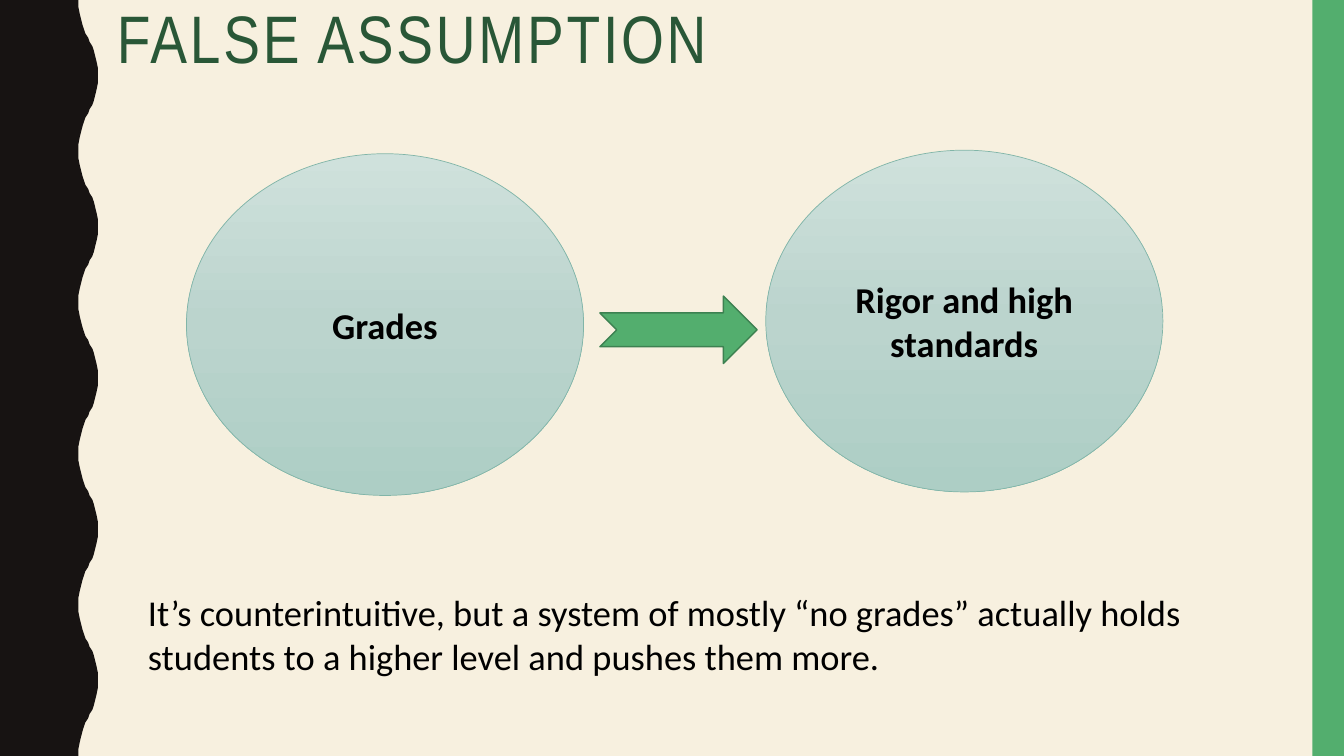
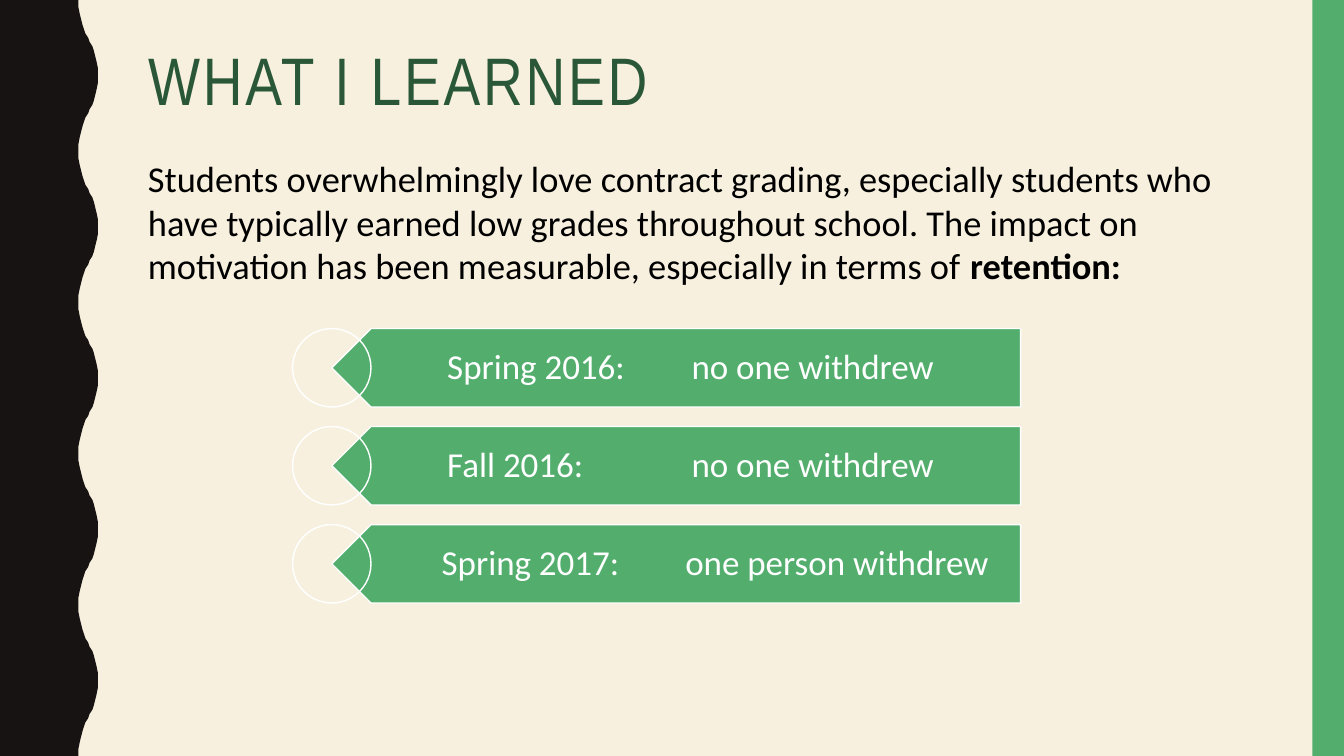
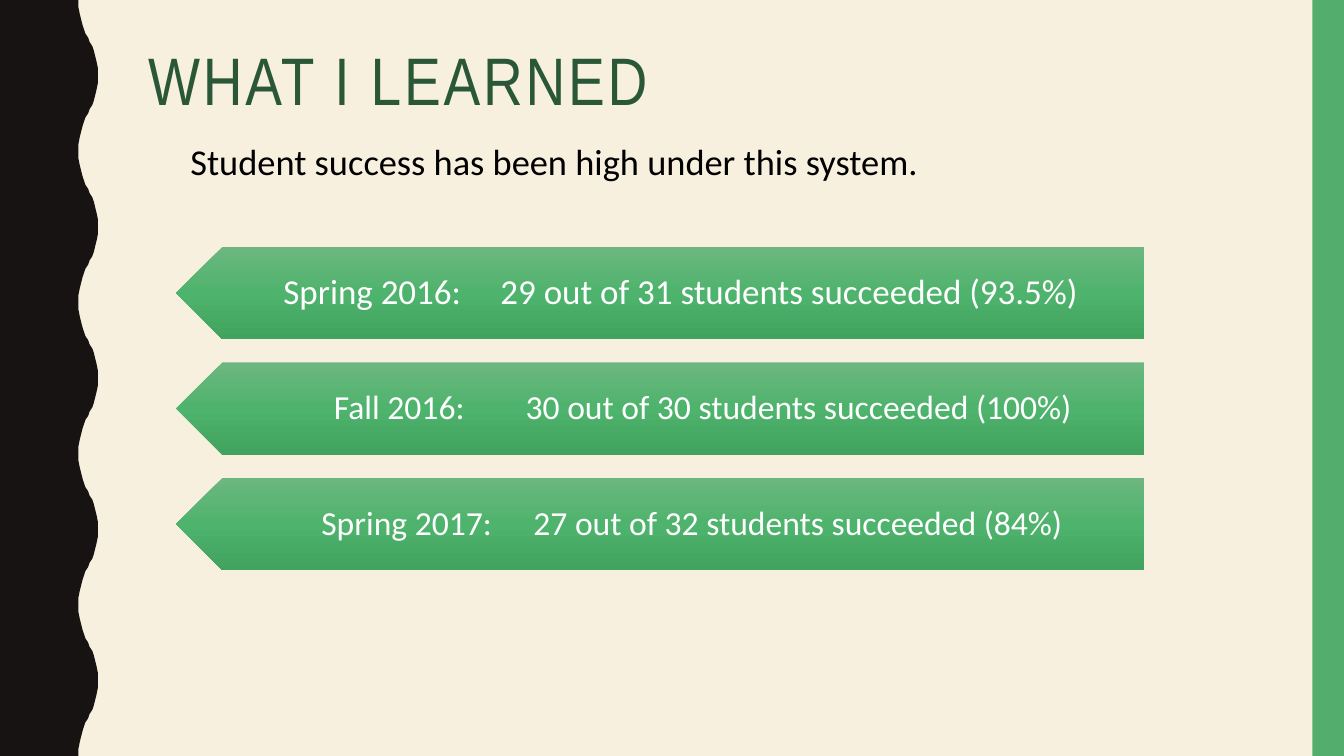
from copy import deepcopy

from pptx import Presentation
from pptx.dml.color import RGBColor
from pptx.enum.shapes import MSO_SHAPE
from pptx.enum.text import MSO_ANCHOR, MSO_AUTO_SIZE, PP_ALIGN
from pptx.oxml.ns import qn
from pptx.util import Pt

WIDE, HIGH = 960, 540
CREAM, INK, GREEN, PINE = "F7F0DF", "171312", "53AE6E", "295737"
EDGE, TEAL, WHITE, BLACK = "3D8151", "81B5A8", "FFFFFF", "000000"
MIST = ("CFE1DC", "BBD4CD", "ADCEC5")
LEAF = ("6CB780", "4EB36C", "42A35E")
HEAD, BODY = "Arial Narrow", "Calibri"
WAVE = [(56, 0), (56.3, 5), (57, 10), (57.8, 14.2), (58.6, 18), (59.7, 21),
        (61.2, 24), (62.6, 27), (64.1, 30), (65.5, 33), (67, 36),
        (68.2, 39.8), (69.2, 44), (69.8, 49), (70, 54)]


def tint(code):
    """Turn a hex string into a colour."""
    return RGBColor.from_string(code)


def paint(shape, fill=None, line=None, width=1):
    """Set fill (none, one colour or three stops) and line of a shape."""
    shape.shadow.inherit = False
    if fill is None:
        shape.fill.background()
    elif isinstance(fill, str):
        shape.fill.solid()
        shape.fill.fore_color.rgb = tint(fill)
    else:
        shape.fill.gradient()
        shape.fill.gradient_angle = 270
        stops = shape._element.spPr.find(qn("a:gradFill")).find(qn("a:gsLst"))
        stops.insert(1, deepcopy(stops[0]))
        for stop, code, place in zip(shape.fill.gradient_stops, fill, (0, 0.5, 1)):
            stop.color.rgb = tint(code)
            stop.position = place
    if line:
        shape.line.color.rgb = tint(line)
        shape.line.width = Pt(width)
    else:
        shape.line.fill.background()


def draw(slide, kind, box, **look):
    """Add a painted preset shape in a box."""
    shape = slide.shapes.add_shape(kind, *map(Pt, box))
    paint(shape, **look)
    return shape


def write(shape, text, size=26, font=BODY, color=BLACK, bold=False, strong="",
          align=PP_ALIGN.LEFT, anchor=MSO_ANCHOR.TOP, lead=None, space=0,
          inset=None, tab=None, wrap=True):
    """Put one formatted paragraph, with an optional bold ending, in a shape."""
    frame = shape.text_frame
    frame.auto_size = MSO_AUTO_SIZE.NONE
    frame.word_wrap = wrap
    frame.vertical_anchor = anchor
    if inset is not None:
        frame.margin_left = frame.margin_right = Pt(inset)
    para = frame.paragraphs[0]
    para.alignment = align
    if lead:
        para.line_spacing = lead
    if tab:
        stops = para._p.get_or_add_pPr().makeelement(qn("a:tabLst"), {})
        stops.append(stops.makeelement(
            qn("a:tab"), {"pos": str(int(Pt(tab))), "algn": "l"}))
        para._p.get_or_add_pPr().append(stops)
    for part, heavy in ((text, bold), (strong, True)):
        if part:
            run = para.add_run()
            run.text = part
            run.font.name = font
            run.font.size = Pt(size)
            run.font.bold = heavy
            run.font.color.rgb = tint(color)
            if space:
                run._r.get_or_add_rPr().set("spc", str(space * 100))


def note(slide, box, text, **form):
    """Add a text box."""
    write(slide.shapes.add_textbox(*map(Pt, box)), text, **form)


def frame(deck, layout):
    """Give the layout its ground, wavy left band and right band."""
    layout.background.fill.solid()
    layout.background.fill.fore_color.rgb = tint(CREAM)
    slide = deck.slides[0]
    half = WAVE[-1][1]
    turn = WAVE + [(x, 2 * half - y) for x, y in reversed(WAVE[:-1])]
    edge = [(x, y + top) for top in range(0, HIGH, 2 * half) for x, y in turn]
    form = slide.shapes.build_freeform(0, 0, scale=Pt(1))
    form.add_line_segments(edge + [(0, HIGH)], close=True)
    wave = form.convert_to_shape()
    paint(wave, INK)
    band = draw(slide, MSO_SHAPE.RECTANGLE, (937.5, 0, 22.5, HIGH), fill=GREEN)
    for spot, shape in enumerate((wave, band), 2):
        layout.shapes._spTree.insert(spot, shape._element)


def start(deck, layout, text, left=98.6, top=30.2):
    """Add a slide with its title."""
    slide = deck.slides.add_slide(layout)
    title = slide.shapes.title
    title.left, title.top, title.width, title.height = map(Pt, (left, top, 801.4, 117.4))
    write(title, text, size=48, font=HEAD, color=PINE, lead=0.9, space=2)
    return slide


def disc(slide, box, text):
    """Draw a soft ellipse with a bold label."""
    shape = draw(slide, MSO_SHAPE.OVAL, box, fill=MIST, line=TEAL, width=0.5)
    write(shape, text, bold=True, align=PP_ALIGN.CENTER, anchor=MSO_ANCHOR.MIDDLE)


def bars(slide, box, step, rows, ring=False, **look):
    """Stack left-pointing bars; each row has term, result, their offsets and size."""
    left, top, width, high = box
    for rank, (term, result, first, second, size) in enumerate(rows):
        y = top + rank * step
        bar = draw(slide, MSO_SHAPE.PENTAGON, (left, y, width, high), **look)
        bar._element.spPr.xfrm.set("flipH", "1")
        note(slide, (left + first, y, width - first, high), f"{term}\t{result}",
             size=size, color=WHITE, anchor=MSO_ANCHOR.MIDDLE, lead=0.9,
             inset=0, tab=second - first)
        if ring:
            draw(slide, MSO_SHAPE.OVAL, (left - high / 2, y, high, high), line=WHITE)


def main():
    """Build the deck."""
    deck = Presentation()
    deck.slide_width, deck.slide_height = Pt(WIDE), Pt(HIGH)
    layout = deck.slide_layouts[5]

    slide = start(deck, layout, "FALSE ASSUMPTION", left=76.3, top=0)
    frame(deck, layout)
    note(slide, (98.6, 418, 756.7, 70),
         "It’s counterintuitive, but a system of mostly “no grades” actually "
         "holds students to a higher level and pushes them more.")
    disc(slide, (547, 107.3, 283.7, 244.1), "Rigor and high standards")
    disc(slide, (133.2, 109.8, 283.7, 244.1), "Grades")
    draw(slide, MSO_SHAPE.NOTCHED_RIGHT_ARROW, (428.5, 211.5, 112.3, 48.2),
         fill=GREEN, line=EDGE)

    slide = start(deck, layout, "WHAT I LEARNED")
    bars(slide, (237, 234.7, 492, 56), 70,
         [("Spring 2016:", "no one withdrew", 82.5, 257, 25),
          ("Fall 2016:", "no one withdrew", 82.5, 257, 25),
          ("Spring 2017:", "one person withdrew", 78.5, 252.5, 25)],
         ring=True, fill=GREEN, line=WHITE)
    note(slide, (98.6, 108, 815, 101.5),
         "Students overwhelmingly love contract grading, especially students who "
         "have typically earned low grades throughout school. The impact on "
         "motivation has been measurable, especially in terms of ",
         strong="retention:")

    slide = start(deck, layout, "WHAT I LEARNED")
    bars(slide, (126, 176.4, 691.5, 66), 82.5,
         [("Spring 2016:", "29 out of 31 students succeeded (93.5%)", 76.5, 231.5, 25),
          ("Fall 2016:", "30 out of 30 students succeeded (100%)", 112.5, 249.5, 24),
          ("Spring 2017:", "27 out of 32 students succeeded (84%)", 103.5, 255, 24)],
         fill=LEAF)
    note(slide, (128.9, 95.8, 540, 38.9),
         "Student success has been high under this system.", wrap=False)

    deck.save("out.pptx")


if __name__ == "__main__":
    main()
